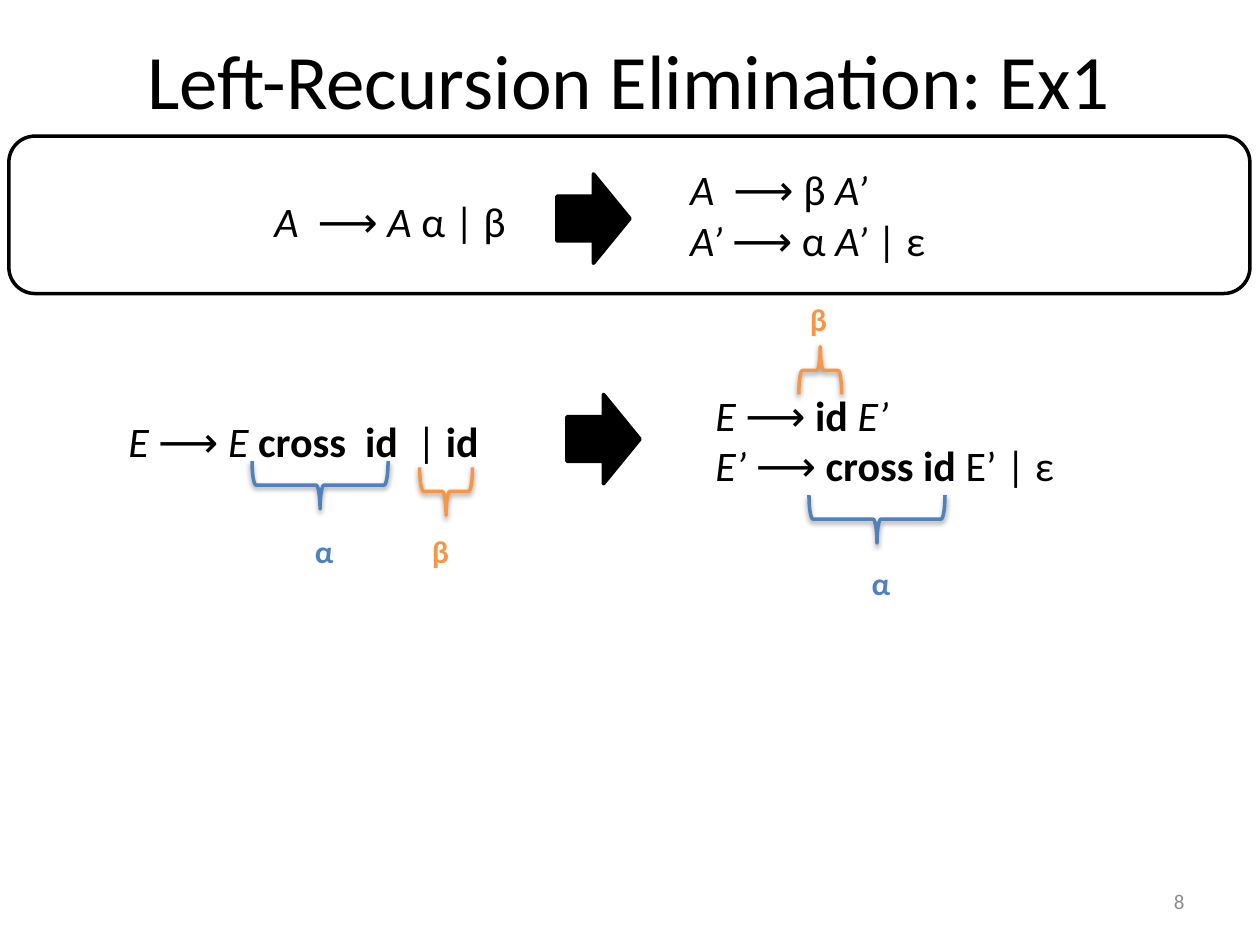
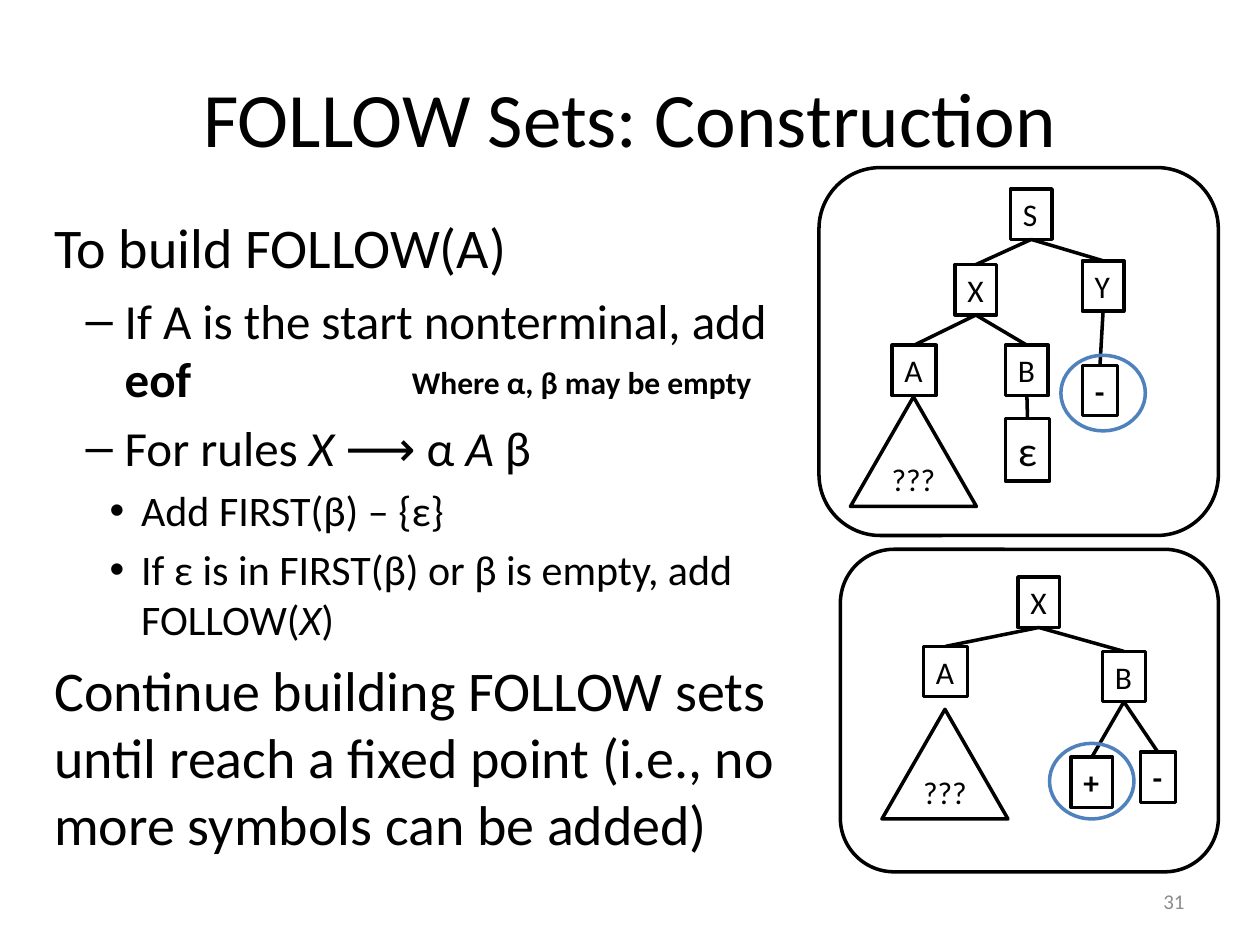
"""Build two compiler slides: left-recursion elimination and FOLLOW set construction."""
from dataclasses import dataclass
from typing import Any, NamedTuple

from lxml import etree
from pptx import Presentation
from pptx.dml.color import RGBColor
from pptx.enum.shapes import MSO_CONNECTOR, MSO_SHAPE
from pptx.enum.text import MSO_ANCHOR, MSO_AUTO_SIZE, PP_ALIGN
from pptx.oxml.ns import qn
from pptx.util import Inches, Pt

BLACK = RGBColor(0x00, 0x00, 0x00)
WHITE = RGBColor(0xFF, 0xFF, 0xFF)
BLUE = RGBColor(0x4F, 0x81, 0xBD)
ORANGE = RGBColor(0xF7, 0x96, 0x46)
GRAY = RGBColor(0x8C, 0x8C, 0x8C)
FONT_NAME = "Calibri"
LINE_WIDTH = Pt(2)

RECTANGLE, ROUNDED = MSO_SHAPE.RECTANGLE, MSO_SHAPE.ROUNDED_RECTANGLE
ARROW, BRACE = MSO_SHAPE.RIGHT_ARROW, MSO_SHAPE.RIGHT_BRACE
TRIANGLE, OVAL = MSO_SHAPE.ISOSCELES_TRIANGLE, MSO_SHAPE.OVAL
STRAIGHT = MSO_CONNECTOR.STRAIGHT
TOP, MIDDLE = MSO_ANCHOR.TOP, MSO_ANCHOR.MIDDLE
LEFT, CENTER, RIGHT = PP_ALIGN.LEFT, PP_ALIGN.CENTER, PP_ALIGN.RIGHT
FIT_SHAPE, NO_FIT = MSO_AUTO_SIZE.SHAPE_TO_FIT_TEXT, MSO_AUTO_SIZE.NONE
BOTTOM_SIDE, TOP_SIDE = 2, 0
TITLE_ONLY, TITLE_AND_CONTENT = 5, 1

GROWING = {"word_wrap": True, "auto_size": FIT_SHAPE, "vertical_anchor": TOP}
UNWRAPPED = GROWING | {"word_wrap": False}
FIXED = {"word_wrap": True, "auto_size": NO_FIT, "vertical_anchor": MIDDLE}
TIGHT = FIXED | dict.fromkeys(
    ("margin_left", "margin_top", "margin_right", "margin_bottom"), Inches(0.05))


class Frame(NamedTuple):
    """Left, top, width and height in inches."""
    left: float
    top: float
    width: float
    height: float


class Span(NamedTuple):
    """A piece of text; style holds b for bold and i for italic."""
    text: str
    style: str = ""


class BodyLine(NamedTuple):
    """One paragraph of the body with its outline level."""
    level: int
    spans: list[Span]


class Level(NamedTuple):
    """Indentation in inches and text size in points of an outline level."""
    margin: float
    indent: float
    size: int


@dataclass
class BraceMark:
    """A brace and the Greek letter that names the part it spans."""
    letter: str
    color: RGBColor
    brace: Frame
    letter_left: float
    letter_top: float
    rotation: int = 90


@dataclass
class Node:
    """A grammar symbol in a parse tree."""
    symbol: str
    left: float
    top: float
    width: float = 0.33
    height: float = 0.4
    size: int = 18
    style: str = ""


@dataclass
class ParseTree:
    """A panel with nodes, parent-child edges, an unknown subtree and a circle."""
    panel: Frame
    nodes: dict[str, Node]
    edges: list[tuple[str, str]]
    subtree: Frame
    circle: Frame


LEVELS = [Level(0, 0, 32), Level(0.56, -0.31, 28), Level(0.69, -0.25, 24)]

RULE_PANEL = Frame(0.07, 1.08, 9.85, 1.25)
REWRITE_ARROWS = [Frame(4.42, 1.38, 0.58, 0.71), Frame(4.5, 3.13, 0.58, 0.71)]
GRAMMARS = [
    (Frame(2.08, 1.5, 2.04, 0.5),
     [[Span("A", "i"), Span("  ⟶ "), Span("A ", "i"), Span("α | β")]]),
    (Frame(5.38, 1.25, 2.37, 0.91),
     [[Span("A", "i"), Span("  ⟶ β "), Span("A’", "i")],
      [Span("A’ ", "i"), Span("⟶ α "), Span("A’ ", "i"), Span("| ε")]]),
    (Frame(0.92, 3.25, 3.17, 0.5),
     [[Span("E", "i"), Span(" ⟶ "), Span("E ", "i"), Span("cross  id  ", "b"),
       Span("| "), Span("id", "b")]]),
    (Frame(5.58, 3.04, 3.5, 0.91),
     [[Span("E", "i"), Span(" ⟶ "), Span("id ", "b"), Span("E’", "i")],
      [Span("E’ ", "i"), Span("⟶ "), Span("cross id", "b"), Span(" E’ | ε")]]),
]
BRACE_MARKS = [
    BraceMark("β", ORANGE, Frame(3.35, 3.69, 0.38, 0.42), 3.33, 4.17),
    BraceMark("α", BLUE, Frame(2.35, 3.31, 0.38, 1.08), 2.4, 4.17),
    BraceMark("α", BLUE, Frame(6.77, 3.58, 0.38, 1.08), 6.82, 4.43),
    BraceMark("β", ORANGE, Frame(6.32, 2.77, 0.38, 0.34), 6.33, 2.33, 270),
]

FOLLOW_RULES = [
    BodyLine(0, [Span("To build FOLLOW(A)")]),
    BodyLine(1, [Span("If A is the start nonterminal, add "), Span("eof", "b")]),
    BodyLine(1, [Span("For rules "), Span("X", "i"), Span(" ⟶ α "), Span("A ", "i"), Span("β")]),
    BodyLine(2, [Span("Add FIRST(β) – {ε}")]),
    BodyLine(2, [Span("If ε is in FIRST(β) or β is empty, add FOLLOW("), Span("X", "i"), Span(")")]),
    BodyLine(0, [Span("Continue building FOLLOW sets until reach a fixed point "
                      "(i.e., no more symbols can be added)")]),
]
PARSE_TREES = [
    ParseTree(
        Frame(6.5, 1.33, 3.17, 2.92),
        {"S": Node("S", 8.02, 1.5), "X": Node("X", 7.58, 2.1), "Y": Node("Y", 8.59, 2.07),
         "A": Node("A", 7.08, 2.74, 0.35), "B": Node("B", 7.98, 2.74, 0.34),
         "minus": Node("-", 8.59, 2.9, 0.28, style="b"),
         "empty": Node("ε", 7.98, 3.32, 0.35, 0.5, 24)},
        [("S", "X"), ("S", "Y"), ("Y", "minus"), ("X", "A"), ("X", "B"), ("B", "empty")],
        Frame(6.75, 3.15, 1, 0.87), Frame(8.42, 2.82, 0.67, 0.6)),
    ParseTree(
        Frame(6.67, 4.36, 3, 2.56),
        {"X": Node("X", 8.08, 4.58), "A": Node("A", 7.33, 5.13, 0.35),
         "B": Node("B", 8.75, 5.17, 0.34), "plus": Node("+", 8.5, 6.01, style="b"),
         "minus": Node("-", 9.05, 5.97, 0.28, style="b")},
        [("X", "A"), ("X", "B"), ("B", "plus"), ("B", "minus")],
        Frame(7, 5.63, 1, 0.87), Frame(8.33, 5.9, 0.67, 0.6)),
]


def set_formats(target: Any, formats: dict[str, Any]) -> None:
    """Set every format value on the target."""
    for attribute, value in formats.items():
        setattr(target, attribute, value)


def place(frame: Frame) -> list[int]:
    """Convert a frame to lengths."""
    return [Inches(value) for value in frame]


def write_spans(paragraph: Any, spans: list[Span], size: int, color: RGBColor = BLACK) -> None:
    """Write formatted runs into a paragraph."""
    for span in spans:
        run = paragraph.add_run()
        run.text = span.text
        set_formats(run.font, {"name": FONT_NAME, "size": Pt(size),
                               "bold": "b" in span.style, "italic": "i" in span.style})
        run.font.color.rgb = color


def write_lines(holder: Any, lines: list[list[Span]], size: int, formats: dict[str, Any],
                color: RGBColor = BLACK, alignment: Any = LEFT) -> None:
    """Fill a shape's text frame with lines of spans."""
    text_frame = holder.text_frame
    set_formats(text_frame, formats)
    for index, spans in enumerate(lines):
        paragraph = text_frame.add_paragraph() if index else text_frame.paragraphs[0]
        paragraph.alignment = alignment
        write_spans(paragraph, spans, size, color)


def add_text(slide: Any, frame: Frame, lines: list[list[Span]], size: int,
             formats: dict[str, Any], color: RGBColor = BLACK, alignment: Any = LEFT) -> None:
    """Add a text box."""
    write_lines(slide.shapes.add_textbox(*place(frame)), lines, size, formats, color, alignment)


def add_figure(shapes: Any, kind: Any, frame: Frame, fill: RGBColor | None = WHITE,
               line: RGBColor = BLACK) -> Any:
    """Add an outlined preset shape without shadow."""
    figure = shapes.add_shape(kind, *place(frame))
    figure.shadow.inherit = False
    if fill is None:
        figure.fill.background()
    else:
        figure.fill.solid()
        figure.fill.fore_color.rgb = fill
    figure.line.color.rgb = line
    figure.line.width = LINE_WIDTH
    return figure


def add_brace_mark(slide: Any, mark: BraceMark) -> None:
    """Draw a softly shadowed brace and its letter as a group."""
    group = slide.shapes.add_group_shape()
    brace = add_figure(group.shapes, BRACE, mark.brace, None, mark.color)
    brace.rotation = mark.rotation
    effects = brace._element.spPr.find(qn("a:effectLst"))
    shadow = etree.SubElement(effects, qn("a:outerShdw"), blurRad="40000", dist="20000",
                              dir="5400000", rotWithShape="0")
    shade = etree.SubElement(shadow, qn("a:srgbClr"), val=str(BLACK))
    etree.SubElement(shade, qn("a:alpha"), val="38000")
    letter = group.shapes.add_textbox(*place(Frame(mark.letter_left, mark.letter_top, 0.35, 0.4)))
    write_lines(letter, [[Span(mark.letter, "b")]], 18, UNWRAPPED, mark.color)


def add_edge(shapes: Any, parent: Any, child: Any) -> None:
    """Join a parent's bottom to its child's top."""
    edge = shapes.add_connector(STRAIGHT, 0, 0, 0, 0)
    edge.begin_connect(parent, BOTTOM_SIDE)
    edge.end_connect(child, TOP_SIDE)
    edge.line.color.rgb = BLACK
    edge.line.width = LINE_WIDTH
    etree.SubElement(edge._element.spPr, qn("a:effectLst"))


def add_parse_tree(slide: Any, tree: ParseTree) -> None:
    """Draw a panel with its parse tree."""
    shapes = slide.shapes
    add_figure(shapes, ROUNDED, tree.panel)
    boxes = {}
    for key, node in tree.nodes.items():
        frame = Frame(node.left, node.top, node.width, node.height)
        boxes[key] = add_figure(shapes, RECTANGLE, frame)
        write_lines(boxes[key], [[Span(node.symbol, node.style)]], node.size, UNWRAPPED)
    for parent, child in tree.edges:
        add_edge(shapes, boxes[parent], boxes[child])
    subtree = add_figure(shapes, TRIANGLE, tree.subtree)
    write_lines(subtree, [[Span("???")]], 18, TIGHT, alignment=CENTER)
    add_figure(shapes, OVAL, tree.circle, None, BLUE)


def move(holder: Any, frame: Frame) -> None:
    """Move a placeholder to a frame."""
    set_formats(holder, dict(zip(("left", "top", "width", "height"), place(frame))))


def start_slide(deck: Any, layout: int, title: str, frame: Frame, number: str) -> Any:
    """Add a slide with its title and page number."""
    slide = deck.slides.add_slide(deck.slide_layouts[layout])
    heading = slide.shapes.title
    move(heading, frame)
    write_lines(heading, [[Span(title)]], 44, FIXED, alignment=CENTER)
    add_text(slide, Frame(7.17, 6.95, 2.33, 0.4), [[Span(number)]], 12, FIXED, GRAY, RIGHT)
    return slide


def build_recursion_slide(deck: Any) -> None:
    """Build the left-recursion example."""
    slide = start_slide(deck, TITLE_ONLY, "Left-Recursion Elimination: Ex1",
                        Frame(0.33, 0, 9.33, 1.25), "8")
    add_figure(slide.shapes, ROUNDED, RULE_PANEL)
    for arrow in REWRITE_ARROWS:
        add_figure(slide.shapes, ARROW, arrow, BLACK)
    for frame, productions in GRAMMARS:
        add_text(slide, frame, productions, 24, GROWING)
    for mark in BRACE_MARKS:
        add_brace_mark(slide, mark)


def build_follow_slide(deck: Any) -> None:
    """Build the FOLLOW set rules with two parse trees."""
    slide = start_slide(deck, TITLE_AND_CONTENT, "FOLLOW Sets: Construction",
                        Frame(0.5, 0.3, 9, 1.25), "31")
    body = slide.placeholders[1]
    move(body, Frame(0.33, 1.64, 6, 5.27))
    set_formats(body.text_frame, FIXED | {"vertical_anchor": TOP})
    for index, rule in enumerate(FOLLOW_RULES):
        paragraph = body.text_frame.add_paragraph() if index else body.text_frame.paragraphs[0]
        paragraph.level = rule.level
        level = LEVELS[rule.level]
        properties = paragraph._p.get_or_add_pPr()
        properties.set("marL", str(Inches(level.margin)))
        properties.set("indent", str(Inches(level.indent)))
        if not rule.level:
            etree.SubElement(properties, qn("a:buNone"))
        write_spans(paragraph, rule.spans, level.size)
    for tree in PARSE_TREES:
        add_parse_tree(slide, tree)
    add_text(slide, Frame(3.17, 2.83, 2.98, 0.4), [[Span("Where α, β may be empty", "b")]],
             18, UNWRAPPED)


def main() -> None:
    """Build and save the slides."""
    deck = Presentation()
    deck.slide_width, deck.slide_height = Inches(10), Inches(7.5)
    build_recursion_slide(deck)
    build_follow_slide(deck)
    deck.save("out.pptx")


if __name__ == "__main__":
    main()
